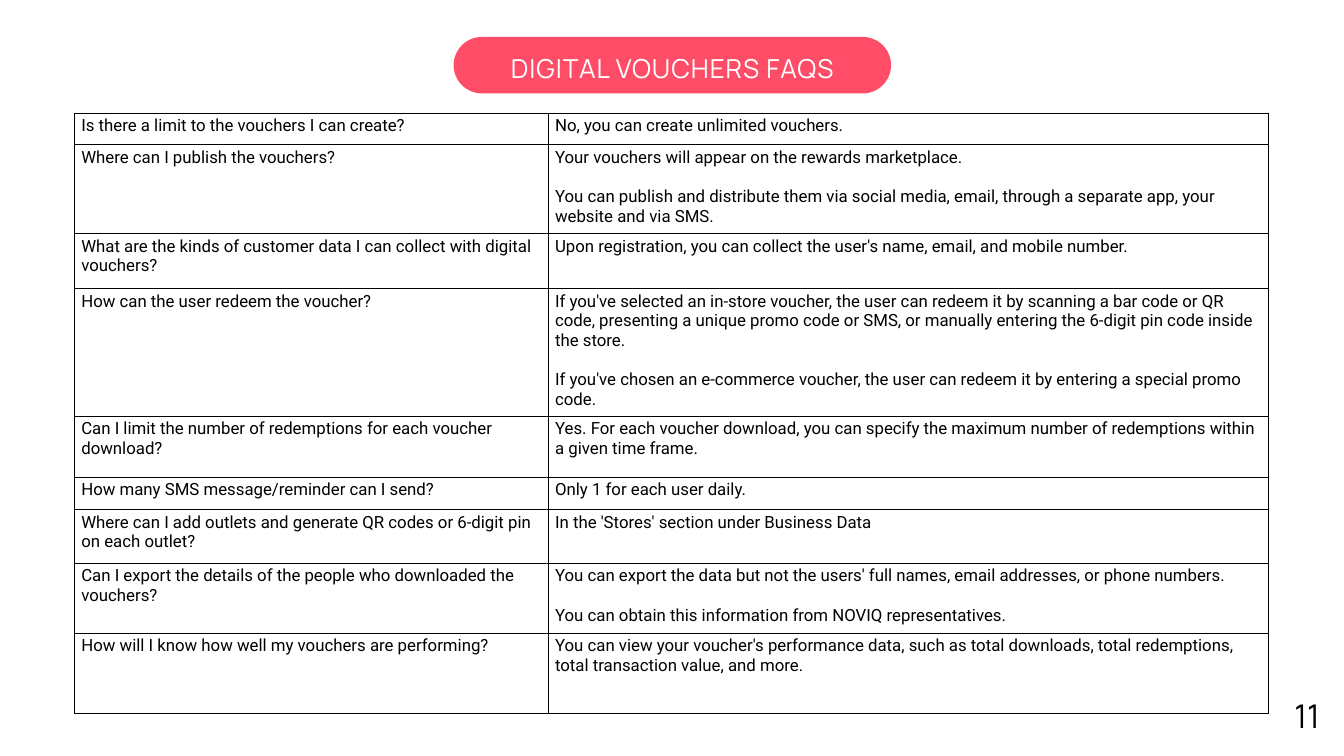
from dataclasses import dataclass

import lxml.etree
import pptx
import pptx.dml.color
import pptx.enum.shapes
import pptx.enum.text
import pptx.oxml.ns
import pptx.util
from pptx.util import Inches


@dataclass(frozen=True)
class Theme:
    """Colours, fonts and type sizes of the slide."""
    accent: str = "FF4D67"
    paper: str = "FFFFFF"
    ink: str = "000000"
    heading_font: str = "Manrope"
    body_font: str = "Roboto"
    title_size: float = 28
    title_leading: float = 39.2
    title_tracking: float = 1.1
    body_size: float = 18
    answer_gap: float = 21.1
    number_size: float = 35
    number_leading: float = 66.5
    border_width: float = 0.75


THEME = Theme()
COLUMN_WIDTHS = (7.05, 10.71)
FAQS = [
    (0.47, "Is there a limit to the vouchers I can create?",
     ["No, you can create unlimited vouchers."]),
    (1.32, "Where can I publish the vouchers?",
     ["Your vouchers will appear on the rewards marketplace.",
      "You can publish and distribute them via social media, email, through a separate app, "
      "your website and via SMS."]),
    (0.82, "What are the kinds of customer data I can collect with digital vouchers?",
     ["Upon registration, you can collect the user's name, email, and mobile number."]),
    (1.9, "How can the user redeem the voucher?",
     ["If you've selected an in-store voucher, the user can redeem it by scanning a bar code "
      "or QR code, presenting a unique promo code or SMS, or manually entering the 6-digit "
      "pin code inside the store.",
      "If you've chosen an e-commerce voucher, the user can redeem it by entering a special "
      "promo code."]),
    (0.91, "Can I limit the number of redemptions for each voucher download?",
     ["Yes. For each voucher download, you can specify the maximum number of redemptions "
      "within a given time frame."]),
    (0.48, "How many SMS message/reminder can I send?",
     ["Only 1 for each user daily."]),
    (0.8, "Where can I add outlets and generate QR codes or 6-digit pin on each outlet?",
     ["In the 'Stores' section under Business Data"]),
    (1.04, "Can I export the details of the people who downloaded the vouchers?",
     ["You can export the data but not the users' full names, email addresses, or phone "
      "numbers.",
      "You can obtain this information from NOVIQ representatives."]),
    (1.2, "How will I know how well my vouchers are performing?",
     ["You can view your voucher's performance data, such as total downloads, total "
      "redemptions, total transaction value, and more."]),
]


def rgb(value):
    """Return a colour object for a hex value."""
    return pptx.dml.color.RGBColor.from_string(value)


def format_runs(paragraph, font_name, size, color):
    """Set the font, size and colour of every run in a paragraph."""
    for run in paragraph.runs:
        run.font.name = font_name
        run.font.size = pptx.util.Pt(size)
        run.font.color.rgb = rgb(color)


def set_margins(text_frame, margin):
    """Give a text frame the same margin on all sides."""
    text_frame.margin_left = text_frame.margin_right = margin
    text_frame.margin_top = text_frame.margin_bottom = margin


def add_title(slide, left, top, width, height):
    """Place the title on a pill that fills the box."""
    pill = slide.shapes.add_shape(
        pptx.enum.shapes.MSO_SHAPE.ROUNDED_RECTANGLE, left, top, width, height)
    pill.adjustments[0] = 0.5
    pill.shadow.inherit = False
    pill.fill.solid()
    pill.fill.fore_color.rgb = rgb(THEME.accent)
    pill.line.fill.background()

    title = slide.shapes.title
    pill.element.addnext(title.element)
    title.left, title.top, title.width, title.height = left, top, width, height
    text_frame = title.text_frame
    text_frame.text = "DIGITAL VOUCHERS FAQS"
    text_frame.word_wrap = True
    text_frame.auto_size = pptx.enum.text.MSO_AUTO_SIZE.NONE
    text_frame.vertical_anchor = pptx.enum.text.MSO_ANCHOR.MIDDLE
    set_margins(text_frame, Inches(0.06))
    paragraph = text_frame.paragraphs[0]
    paragraph.alignment = pptx.enum.text.PP_ALIGN.CENTER
    paragraph.line_spacing = pptx.util.Pt(THEME.title_leading)
    format_runs(paragraph, THEME.heading_font, THEME.title_size, THEME.paper)
    tracking = str(round(THEME.title_tracking * 100))
    paragraph.runs[0].font._element.set("spc", tracking)


def add_borders(cell):
    """Draw a thin line on all four sides of a cell."""
    properties = cell._tc.get_or_add_tcPr()
    qn = pptx.oxml.ns.qn
    for side in ("a:lnL", "a:lnR", "a:lnT", "a:lnB"):
        line = lxml.etree.SubElement(
            properties, qn(side), w=str(pptx.util.Pt(THEME.border_width)))
        fill = lxml.etree.SubElement(line, qn("a:solidFill"))
        lxml.etree.SubElement(fill, qn("a:srgbClr"), val=THEME.ink)


def fill_cell(cell, texts):
    """Write spaced paragraphs into a bordered cell."""
    add_borders(cell)
    cell.fill.solid()
    cell.fill.fore_color.rgb = rgb(THEME.paper)
    cell.text_frame.text = "\n".join(texts)
    for index, paragraph in enumerate(cell.text_frame.paragraphs):
        if index:
            paragraph.space_before = pptx.util.Pt(THEME.answer_gap)
        format_runs(paragraph, THEME.body_font, THEME.body_size, THEME.ink)


def add_faq_table(slide, left, top, width, height):
    """Place the table of questions and answers in the box."""
    table = slide.shapes.add_table(
        len(FAQS), len(COLUMN_WIDTHS), left, top, width, height).table
    table.first_row = False
    table.horz_banding = False
    for column, column_width in zip(table.columns, COLUMN_WIDTHS):
        column.width = Inches(column_width)
    for row, (row_height, question, answers) in zip(table.rows, FAQS):
        row.height = Inches(row_height)
        fill_cell(row.cells[0], [question])
        fill_cell(row.cells[1], answers)


def add_page_number(slide, left, top, width, height):
    """Place the page number in the box."""
    text_frame = slide.shapes.add_textbox(left, top, width, height).text_frame
    set_margins(text_frame, 0)
    text_frame.word_wrap = False
    text_frame.auto_size = pptx.enum.text.MSO_AUTO_SIZE.SHAPE_TO_FIT_TEXT
    text_frame.text = "11"
    paragraph = text_frame.paragraphs[0]
    paragraph.line_spacing = pptx.util.Pt(THEME.number_leading)
    format_runs(paragraph, THEME.heading_font, THEME.number_size, THEME.ink)


def main():
    """Build the slide and save it."""
    presentation = pptx.Presentation()
    presentation.slide_width = Inches(20)
    presentation.slide_height = Inches(11.25)
    slide = presentation.slides.add_slide(presentation.slide_layouts[5])
    add_title(slide, Inches(6.75), Inches(0.55), Inches(6.51), Inches(0.84))
    add_page_number(slide, Inches(19.26), Inches(10.02), Inches(0.49), Inches(0.83))
    add_faq_table(slide, Inches(1.11), Inches(1.68), Inches(17.76), Inches(8.93))
    presentation.save("out.pptx")


if __name__ == "__main__":
    main()
